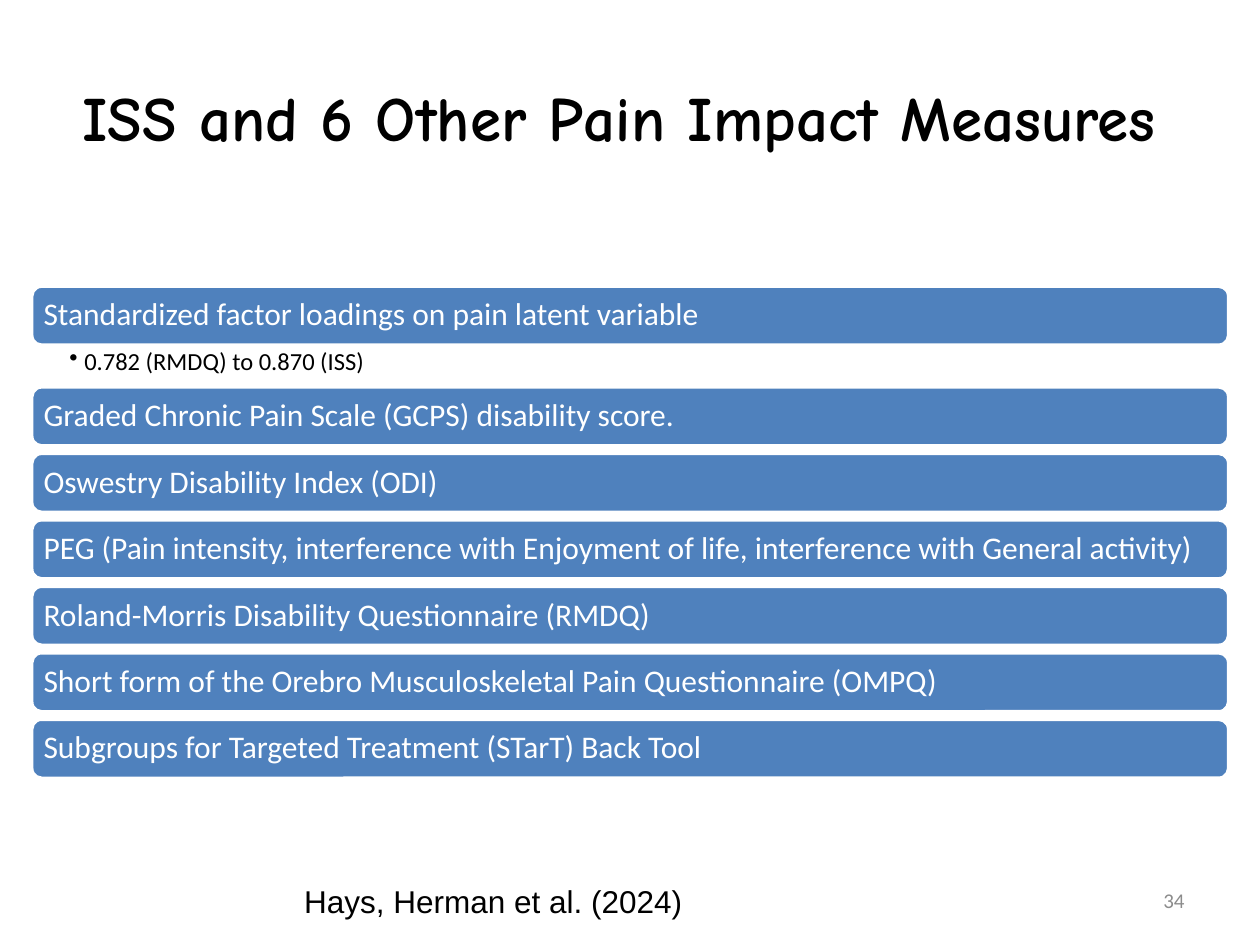
"""Build a slide listing the ISS and six other pain impact measures."""
import pptx
import pptx.dml.color
import pptx.enum.shapes
import pptx.enum.text
import pptx.oxml.ns
import pptx.util
from lxml import etree

Cm = pptx.util.Cm
ALIGN = pptx.enum.text.PP_ALIGN
ANCHOR = pptx.enum.text.MSO_ANCHOR

TITLE = "ISS and 6 Other Pain Impact Measures "
MEASURES = [
    ("Standardized factor loadings on pain latent variable", "0.782 (RMDQ) to 0.870 (ISS)"),
    ("Graded Chronic Pain Scale (GCPS) disability score.", None),
    ("Oswestry Disability Index (ODI)", None),
    ("PEG (Pain intensity, interference with Enjoyment of life, "
     "interference with General activity)", None),
    ("Roland-Morris Disability Questionnaire (RMDQ)", None),
    ("Short form of the Orebro Musculoskeletal Pain Questionnaire (OMPQ)", None),
    ("Subgroups for Targeted Treatment (STarT) Back Tool", None),
]
CITATION = "Hays, Herman et al. (2024)"
PAGE_NUMBER = "34"

BAR_LEFT, BAR_WIDTH, BAR_HEIGHT = 0.64, 24.13, 1.19
FIRST_TOP, BAR_GAP, DETAIL_HEIGHT = 5.77, 0.15, 0.84


def color(value):
    return pptx.dml.color.RGBColor.from_string(value)


def write(shape, text, size, font, fill, align=ALIGN.LEFT, anchor=ANCHOR.MIDDLE,
          bold=False, insets=(0.25, 0.13, 0.25, 0.13)):
    frame = shape.text_frame
    frame.word_wrap = True
    frame.vertical_anchor = anchor
    frame.margin_left, frame.margin_top, frame.margin_right, frame.margin_bottom = map(Cm, insets)
    paragraph = frame.paragraphs[0]
    paragraph.alignment = align
    run = paragraph.add_run()
    run.text = text
    run.font.size = pptx.util.Pt(size)
    run.font.name = font
    run.font.bold = bold
    run.font.color.rgb = color(fill)
    return paragraph


def add_text(slide, box, *content, **options):
    return write(slide.shapes.add_textbox(*map(Cm, box)), *content, **options)


def add_bar(slide, top, text):
    bar = slide.shapes.add_shape(pptx.enum.shapes.MSO_SHAPE.ROUNDED_RECTANGLE,
                                 *map(Cm, (BAR_LEFT, top, BAR_WIDTH, BAR_HEIGHT)))
    bar.shadow.inherit = False
    bar.fill.solid()
    bar.fill.fore_color.rgb = color("4F81BD")
    bar.line.color.rgb = color("FFFFFF")
    bar.line.width = pptx.util.Pt(2)
    paragraph = write(bar, text, 18, "Calibri", "FFFFFF", insets=(0.18,) * 4)
    paragraph.line_spacing = 0.9


def add_detail(slide, top, text):
    paragraph = add_text(slide, (BAR_LEFT, top, BAR_WIDTH, DETAIL_HEIGHT), text, 14, "Calibri",
                         "000000", anchor=ANCHOR.TOP, insets=(0.76, 0.08, 0.36, 0.08))
    paragraph.level = 1
    paragraph.line_spacing = 0.9
    properties = paragraph._p.get_or_add_pPr()
    properties.set("marL", str(Cm(0.3)))
    properties.set("indent", str(-Cm(0.3)))
    bullet = etree.SubElement(properties, pptx.oxml.ns.qn("a:buChar"))
    bullet.set("char", "•")


def main():
    presentation = pptx.Presentation()
    presentation.slide_width, presentation.slide_height = Cm(25.4), Cm(19.05)
    slide = presentation.slides.add_slide(presentation.slide_layouts[6])
    add_text(slide, (0, 0.76, 25.4, 3.18), TITLE, 36, "Comic Neue", "000000",
             align=ALIGN.CENTER, bold=True)
    top = FIRST_TOP
    for measure, detail in MEASURES:
        add_bar(slide, top, measure)
        top += BAR_HEIGHT
        if detail:
            add_detail(slide, top, detail)
            top += DETAIL_HEIGHT
        else:
            top += BAR_GAP
    add_text(slide, (18.2, 17.65, 5.93, 1.01), PAGE_NUMBER, 12, "Calibri", "8C8C8C",
             align=ALIGN.RIGHT)
    add_text(slide, (5.08, 17.65, 9.73, 1.03), CITATION, 18, "Arial", "000000",
             align=ALIGN.CENTER, anchor=ANCHOR.TOP)
    presentation.save("out.pptx")


if __name__ == "__main__":
    main()
